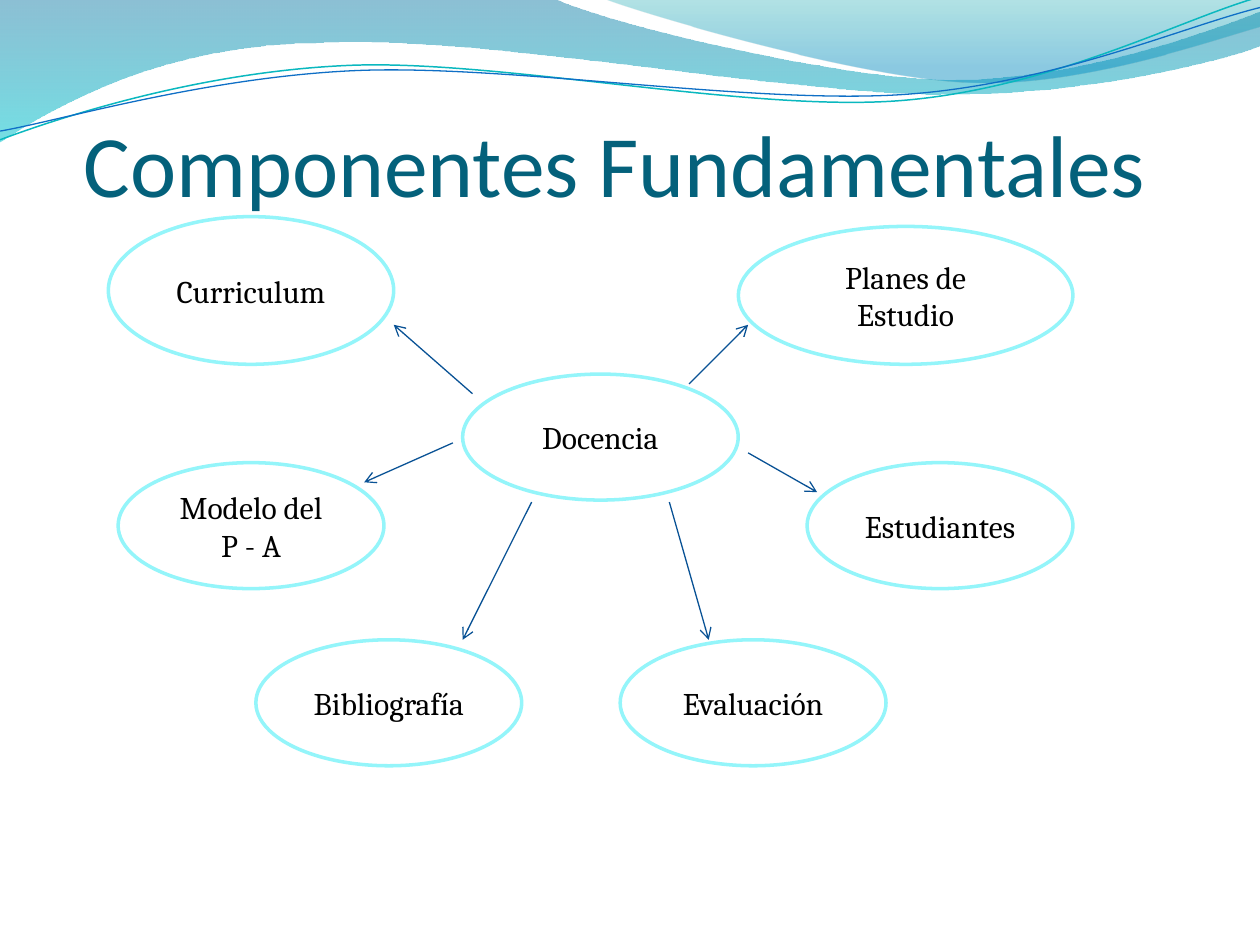
from dataclasses import dataclass
from typing import Optional

import pptx
import pptx.dml.color
import pptx.enum.shapes
import pptx.enum.text
import pptx.oxml
import pptx.oxml.ns
import pptx.util

Pt = pptx.util.Pt
RGBColor = pptx.dml.color.RGBColor
Point = tuple[float, float]

WHITE = RGBColor(0xFF, 0xFF, 0xFF)
BLACK = RGBColor(0x00, 0x00, 0x00)
TITLE_BLUE = RGBColor(0x04, 0x61, 0x7B)
OUTLINE_CYAN = RGBColor(0x94, 0xF5, 0xFA)
ARROW_BLUE = RGBColor(0x09, 0x52, 0x95)
DEEP_BLUE = RGBColor(0x00, 0x74, 0xA1)
TURQUOISE = RGBColor(0x00, 0xC6, 0xCF)
TEAL = RGBColor(0x00, 0xA1, 0xA9)
SKY_BLUE = RGBColor(0x00, 0x8B, 0xBF)
CURVE_TEAL = RGBColor(0x0A, 0xB8, 0xBF)
CURVE_BLUE = RGBColor(0x0F, 0x6F, 0xC6)

NAMESPACE = pptx.oxml.ns.nsdecls("a")


@dataclass(frozen=True)
class Stop:
    position: float
    color: RGBColor
    opacity: int


@dataclass(frozen=True)
class Wave:
    start: Point
    segments: tuple[tuple[Point, ...], ...]
    stops: tuple[Stop, ...] = ()
    line_color: Optional[RGBColor] = None
    line_width: float = 0.75


@dataclass(frozen=True)
class Bubble:
    text: str
    left: float
    top: float
    width: float = 151.9
    height: float = 72


@dataclass(frozen=True)
class Arrow:
    start: Point
    end: Point


WAVES = (
    Wave((0, -0.7), (
        ((316.8, -0.7),),
        ((342.7, 12.2), (478.1, 45.4), (545.8, 45.4)),
        ((614.2, 45.4), (689.8, 18.7), (720, 6.5)),
        ((720.7, 25.9),),
        ((707.8, 31.7), (626.4, 54.7), (537.1, 54)),
        ((447.8, 54), (275, 20.2), (185, 24.5)),
        ((92.9, 25.2), (33.1, 59.8), (-0.7, 81.4)),
    ), stops=(Stop(0, DEEP_BLUE, 45), Stop(1, TURQUOISE, 55))),
    Wave((344.9, -0.7), (
        ((366.5, 7.9), (491, 44.6), (553.7, 46.8)),
        ((616.3, 49.7), (691.9, 23), (720, 15.1)),
        ((720, 0),),
    ), stops=(Stop(0, TEAL, 30), Stop(0.8, SKY_BLUE, 45))),
    Wave((0, 79.9), (
        ((34.6, 67), (113.8, 41), (199.4, 37.4)),
        ((284.4, 33.8), (427, 64.1), (513.4, 57.6)),
        ((599.8, 51.1), (675.4, 10.8), (718.6, -1.4)),
    ), line_color=CURVE_TEAL, line_width=0.85),
    Wave((0, 74.9), (
        ((33.8, 69.1), (118.1, 43.9), (203.8, 40.3)),
        ((290.2, 36.7), (429.8, 59.8), (516.2, 54)),
        ((601.9, 48.2), (676.1, 15.1), (720, 4.3)),
    ), line_color=CURVE_BLUE),
)

MIDDLE_ROW = 264.4
BOTTOM_ROW = 365.6
BUBBLES = (
    Bubble("Curriculum", 61.9, 123.8, 163.1, 84.4),
    Bubble("Planes de Estudio", 421.9, 129.4, 191.2, 78.8),
    Bubble("Docencia", 264.4, 213.8, 157.5),
    Bubble("Modelo del P - A", 67.5, MIDDLE_ROW),
    Bubble("Estudiantes", 461.2, MIDDLE_ROW),
    Bubble("Bibliografía", 146.2, BOTTOM_ROW),
    Bubble("Evaluación", 354.4, BOTTOM_ROW),
)

ARROWS = (
    Arrow((270, 225), (225, 185.6)),
    Arrow((393.8, 219.4), (427.5, 185.6)),
    Arrow((303.8, 286.9), (264.4, 365.6)),
    Arrow((382.5, 286.9), (405, 365.6)),
    Arrow((427.5, 258.8), (466.9, 281.2)),
    Arrow((258.8, 253.1), (208.1, 275.6)),
)


def bend_segments(shape: pptx.shapes.autoshape.Shape, wave: Wave) -> None:
    lines = list(shape._element.spPr.iter(pptx.oxml.ns.qn("a:lnTo")))
    for line, segment in zip(lines, wave.segments):
        if len(segment) == 1:
            continue
        points = "".join(
            f'<a:pt x="{Pt(x) - shape.left}" y="{Pt(y) - shape.top}"/>'
            for x, y in segment)
        curve = pptx.oxml.parse_xml(
            f"<a:cubicBezTo {NAMESPACE}>{points}</a:cubicBezTo>")
        line.getparent().replace(line, curve)


def add_wave(slide: pptx.slide.Slide, wave: Wave) -> None:
    ends = [(Pt(x), Pt(y)) for x, y in (segment[-1] for segment in wave.segments)]
    builder = slide.shapes.build_freeform(Pt(wave.start[0]), Pt(wave.start[1]), scale=1.0)
    builder.add_line_segments(ends, close=bool(wave.stops))
    shape = builder.convert_to_shape()
    bend_segments(shape, wave)
    shape.shadow.inherit = False
    if wave.line_color is not None:
        shape.fill.background()
        shape.line.color.rgb = wave.line_color
        shape.line.width = Pt(wave.line_width)
        return
    shape.line.fill.background()
    shape.fill.gradient()
    shape.fill.gradient_angle = 270
    for gradient_stop, stop in zip(shape.fill.gradient_stops, wave.stops):
        gradient_stop.position = stop.position
        gradient_stop.color.rgb = stop.color
    colors = shape._element.spPr.iter(pptx.oxml.ns.qn("a:srgbClr"))
    for color, stop in zip(list(colors), wave.stops):
        color.append(pptx.oxml.parse_xml(
            f'<a:alpha {NAMESPACE} val="{stop.opacity * 1000}"/>'))


def write_text(frame: pptx.text.text.TextFrame, text: str, font_name: str,
               size: float, color: RGBColor) -> None:
    frame.word_wrap = True
    paragraph = frame.paragraphs[0]
    paragraph.alignment = pptx.enum.text.PP_ALIGN.CENTER
    run = paragraph.add_run()
    run.text = text
    run.font.name = font_name
    run.font.size = Pt(size)
    run.font.color.rgb = color


def format_title(title: pptx.shapes.placeholder.SlidePlaceholder) -> None:
    title.left, title.top = Pt(16.6), Pt(56.2)
    title.width, title.height = Pt(669.6), Pt(427.7)
    frame = title.text_frame
    frame.auto_size = pptx.enum.text.MSO_AUTO_SIZE.NONE
    frame.vertical_anchor = pptx.enum.text.MSO_ANCHOR.TOP
    frame.margin_left = frame.margin_right = frame.margin_bottom = 0
    frame.margin_top = Pt(6.4)
    write_text(frame, "Componentes Fundamentales", "Calibri", 50, TITLE_BLUE)


def add_bubble(slide: pptx.slide.Slide, bubble: Bubble) -> None:
    shape = slide.shapes.add_shape(
        pptx.enum.shapes.MSO_SHAPE.OVAL, Pt(bubble.left), Pt(bubble.top),
        Pt(bubble.width), Pt(bubble.height))
    shape.shadow.inherit = False
    shape.fill.solid()
    shape.fill.fore_color.rgb = WHITE
    shape.line.color.rgb = OUTLINE_CYAN
    shape.line.width = Pt(2)
    shape.text_frame.vertical_anchor = pptx.enum.text.MSO_ANCHOR.MIDDLE
    write_text(shape.text_frame, bubble.text, "Cambria", 18, BLACK)


def add_arrow(slide: pptx.slide.Slide, arrow: Arrow) -> None:
    connector = slide.shapes.add_connector(
        pptx.enum.shapes.MSO_CONNECTOR.STRAIGHT,
        *(Pt(value) for value in (*arrow.start, *arrow.end)))
    connector.line.color.rgb = ARROW_BLUE
    connector.line.width = Pt(0.75)
    connector.line._get_or_add_ln().append(
        pptx.oxml.parse_xml(f'<a:tailEnd {NAMESPACE} type="arrow"/>'))
    connector._element.spPr.append(pptx.oxml.parse_xml(f"<a:effectLst {NAMESPACE}/>"))


def main() -> None:
    presentation = pptx.Presentation()
    presentation.slide_width, presentation.slide_height = Pt(720), Pt(540)
    slide = presentation.slides.add_slide(presentation.slide_layouts.get_by_name("Title Only"))
    title = slide.shapes.title
    format_title(title)
    for wave in WAVES:
        add_wave(slide, wave)
    slide.shapes._spTree.append(title._element)
    for bubble in BUBBLES:
        add_bubble(slide, bubble)
    for arrow in ARROWS:
        add_arrow(slide, arrow)
    presentation.save("out.pptx")


if __name__ == "__main__":
    main()
